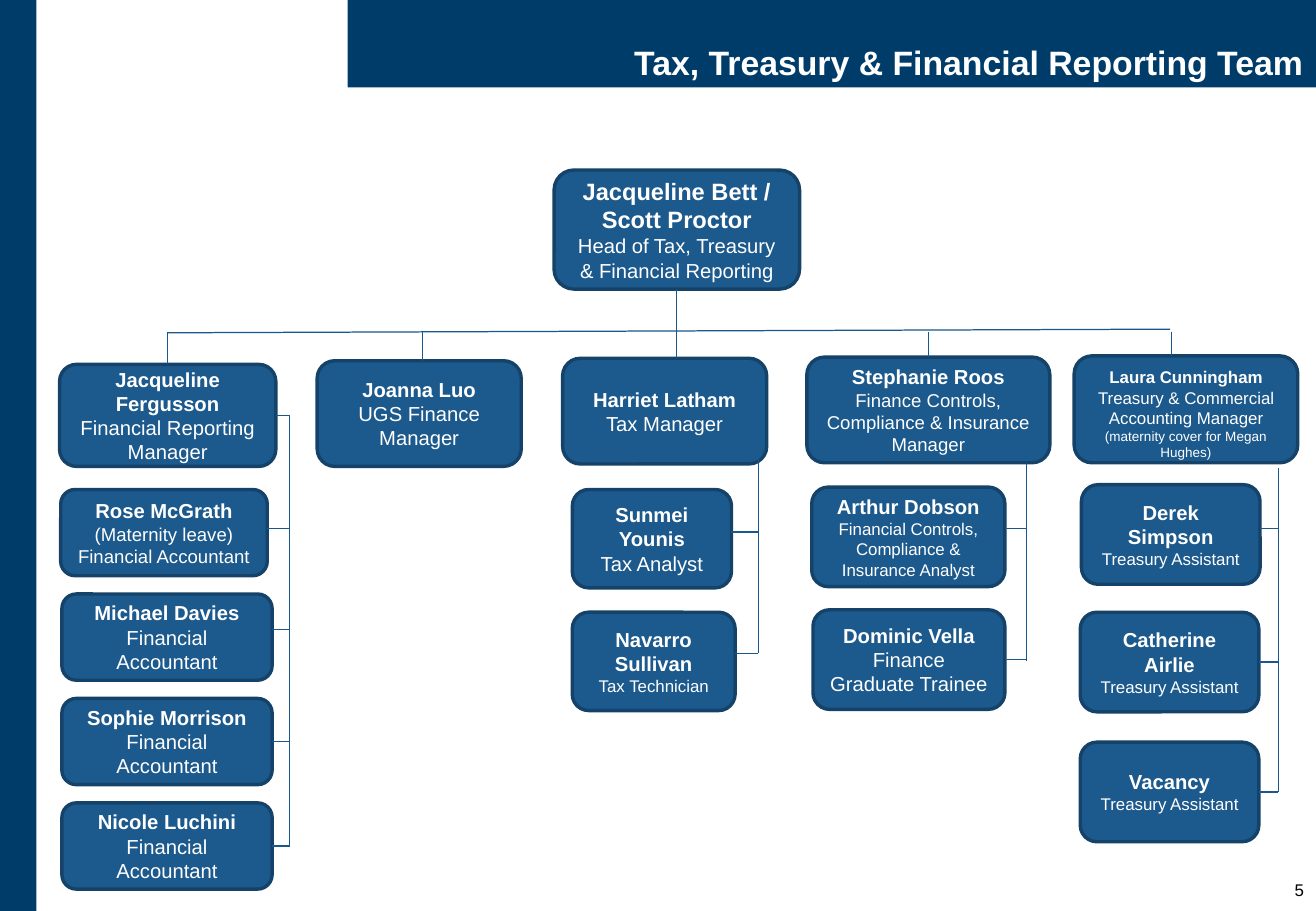
from dataclasses import dataclass

from lxml import etree
from pptx import Presentation
from pptx.dml.color import RGBColor
from pptx.enum.shapes import MSO_CONNECTOR, MSO_SHAPE
from pptx.enum.text import MSO_ANCHOR, PP_ALIGN
from pptx.oxml.ns import qn
from pptx.util import Inches, Pt

ROUNDED, RECT = MSO_SHAPE.ROUNDED_RECTANGLE, MSO_SHAPE.RECTANGLE
STRAIGHT = MSO_CONNECTOR.STRAIGHT
TOP, MIDDLE, BOTTOM = MSO_ANCHOR.TOP, MSO_ANCHOR.MIDDLE, MSO_ANCHOR.BOTTOM
CENTER, RIGHT = PP_ALIGN.CENTER, PP_ALIGN.RIGHT
TOP_SITE, BOTTOM_SITE, RIGHT_SITE = 0, 2, 3
FONT = "Arial"
NAVY, BLUE, EDGE, LINE, WHITE, BLACK = "003C69", "1C598C", "154268", "19578C", "FFFFFF", "000000"


@dataclass
class Person:
    name: str
    role: str
    x: float
    y: float
    w: float
    h: float
    size: float = 12
    role_size: float = 12
    note: str = ""
    anchor: MSO_ANCHOR = MIDDLE
    stub_y: float = 0

    @property
    def center(self) -> float:
        return self.x + self.w / 2

    @property
    def middle(self) -> float:
        return self.y + self.h / 2


@dataclass
class Team:
    lead: Person
    drop_x: float
    members: list
    rail_x: float = 0
    rail_top: float = 0
    rail_bottom: float = 0


HEAD = Person("Jacqueline Bett / Scott Proctor", "Head of Tax, Treasury & Financial Reporting",
              4.56, 1.4, 2.02, 0.98, size=14)

ACCOUNTANTS = [("Michael Davies", 5.18), ("Sophie Morrison", 6.11), ("Nicole Luchini", 6.95)]

TEAMS = [
    Team(Person("Jacqueline Fergusson", "Financial Reporting Manager", 0.49, 3, 1.78, 0.84, stub_y=3.42),
         1.38,
         [Person("Rose McGrath", "(Maternity leave) Financial Accountant", 0.5, 4.03, 1.7, 0.71,
                 role_size=11, stub_y=4.35)]
         + [Person(name, "Financial Accountant", 0.51, 4.89 + 0.86 * i, 1.73, 0.71, stub_y=y)
            for i, (name, y) in enumerate(ACCOUNTANTS)],
         2.38, 3.42, 6.97),
    Team(Person("Joanna Luo", "UGS Finance Manager", 2.61, 2.97, 1.68, 0.87), 3.48, []),
    Team(Person("Harriet Latham", "Tax Manager", 4.63, 2.95, 1.68, 0.87), 5.57,
         [Person("Sunmei Younis", "Tax Analyst", 4.71, 4.03, 1.31, 0.81, stub_y=4.38),
          Person("Navarro Sullivan", "Tax Technician", 4.71, 5.04, 1.34, 0.81, role_size=10, stub_y=5.38)],
         6.24, 3.75, 5.38),
    Team(Person("Stephanie Roos", "Finance Controls, Compliance & Insurance Manager",
                6.64, 2.94, 2, 0.87, role_size=11), 7.64,
         [Person("Arthur Dobson", "Financial Controls, Compliance & Insurance Analyst",
                 6.68, 4.01, 1.59, 0.82, role_size=10, stub_y=4.35),
          Person("Dominic Vella", "Finance Graduate Trainee", 6.69, 5.02, 1.58, 0.82, stub_y=5.44)],
         8.45, 3.81, 5.44),
    Team(Person("Laura Cunningham", "Treasury & Commercial Accounting Manager ", 8.84, 2.93, 1.84, 0.88,
                size=10, role_size=10, note="(maternity cover for Megan Hughes)", anchor=TOP), 9.64,
         [Person(name, "Treasury Assistant", x, y, 1.47, 0.82, role_size=10, stub_y=stub_y)
          for name, x, y, stub_y in [("Derek Simpson", 8.9, 3.99, 4.35),
                                     ("Catherine Airlie", 8.89, 5.04, 5.44),
                                     ("Vacancy", 8.89, 6.11, 6.52)]],
         10.52, 3.85, 6.52),
]


def rgb(color: str) -> RGBColor:
    return RGBColor.from_string(color)


def add_run(p, text: str, size: float = 12, bold: bool = False, color: str = WHITE):
    r = p.add_run()
    r.text = text
    r.font.name, r.font.size, r.font.bold = FONT, Pt(size), bold
    r.font.color.rgb = rgb(color)
    return r


def add_line(s, x1: float, y1: float, x2: float, y2: float):
    line = s.shapes.add_connector(STRAIGHT, Inches(x1), Inches(y1), Inches(x2), Inches(y2))
    line.line.color.rgb = rgb(LINE)
    line.line.width = Pt(0.75)
    etree.SubElement(line._element.spPr, qn("a:effectLst"))
    return line


def add_person(s, person: Person):
    sp = s.shapes.add_shape(ROUNDED, Inches(person.x), Inches(person.y), Inches(person.w), Inches(person.h))
    sp.shadow.inherit = False
    sp.fill.solid()
    sp.fill.fore_color.rgb = rgb(BLUE)
    sp.line.color.rgb = rgb(EDGE)
    sp.line.width = Pt(2)
    tf = sp.text_frame
    tf.word_wrap = True
    tf.vertical_anchor = person.anchor
    p = tf.paragraphs[0]
    p.alignment = CENTER
    add_run(p, person.name, size=person.size, bold=True)
    p = tf.add_paragraph()
    p.alignment = CENTER
    add_run(p, person.role, size=person.role_size)
    if person.note:
        add_run(p, person.note, size=8)
    return sp


def add_stub(s, person: Person, sp, rail_x: float) -> None:
    joined = abs(person.stub_y - person.middle) <= 0.02
    y = person.middle if joined else person.stub_y
    line = add_line(s, person.x + person.w, y, rail_x, y)
    if joined:
        line.begin_connect(sp, RIGHT_SITE)


def add_drop(s, team: Team, sp) -> None:
    joined = abs(team.drop_x - team.lead.center) <= 0.03
    x = team.lead.center if joined else team.drop_x
    line = add_line(s, x, 2.73, x, team.lead.y)
    if joined:
        line.end_connect(sp, TOP_SITE)


def add_team(s, team: Team) -> None:
    lead_sp = add_person(s, team.lead)
    add_drop(s, team, lead_sp)
    if team.lead.stub_y:
        add_stub(s, team.lead, lead_sp, team.rail_x)
    for member in team.members:
        add_stub(s, member, add_person(s, member), team.rail_x)
    if team.members:
        add_line(s, team.rail_x, team.rail_top, team.rail_x, team.rail_bottom)


def add_frame(s) -> None:
    bar = s.shapes.add_shape(RECT, 0, 0, Inches(0.3), Inches(7.5))
    bar.shadow.inherit = False
    bar.fill.solid()
    bar.fill.fore_color.rgb = rgb(NAVY)
    bar.line.fill.background()

    title = s.shapes.title
    title.left, title.top, title.width, title.height = Inches(2.86), 0, Inches(7.97), Inches(0.72)
    title.fill.solid()
    title.fill.fore_color.rgb = rgb(NAVY)
    tf = title.text_frame
    tf.word_wrap = True
    tf.vertical_anchor = BOTTOM
    tf.margin_left, tf.margin_right = Inches(0.08), Inches(0.1)
    tf.margin_top = tf.margin_bottom = Inches(0.04)
    p = tf.paragraphs[0]
    p.alignment, p.line_spacing = RIGHT, 0.9
    add_run(p, "Tax, Treasury & Financial Reporting Team", size=20, bold=True)

    tf = s.shapes.add_textbox(Inches(9.96), Inches(7.19), Inches(0.87), Inches(0.31)).text_frame
    tf.word_wrap = True
    tf.paragraphs[0].alignment = RIGHT
    add_run(tf.paragraphs[0], "5", size=10, color=BLACK)


def main() -> None:
    prs = Presentation()
    prs.slide_width, prs.slide_height = Inches(10.83), Inches(7.5)
    s = prs.slides.add_slide(prs.slide_layouts[5])
    add_frame(s)
    head_sp = add_person(s, HEAD)
    add_line(s, HEAD.center, HEAD.y + HEAD.h, HEAD.center, 2.73).begin_connect(head_sp, BOTTOM_SITE)
    add_line(s, 1.38, 2.74, 9.63, 2.71)
    for team in TEAMS:
        add_team(s, team)
    prs.save("out.pptx")


if __name__ == "__main__":
    main()
